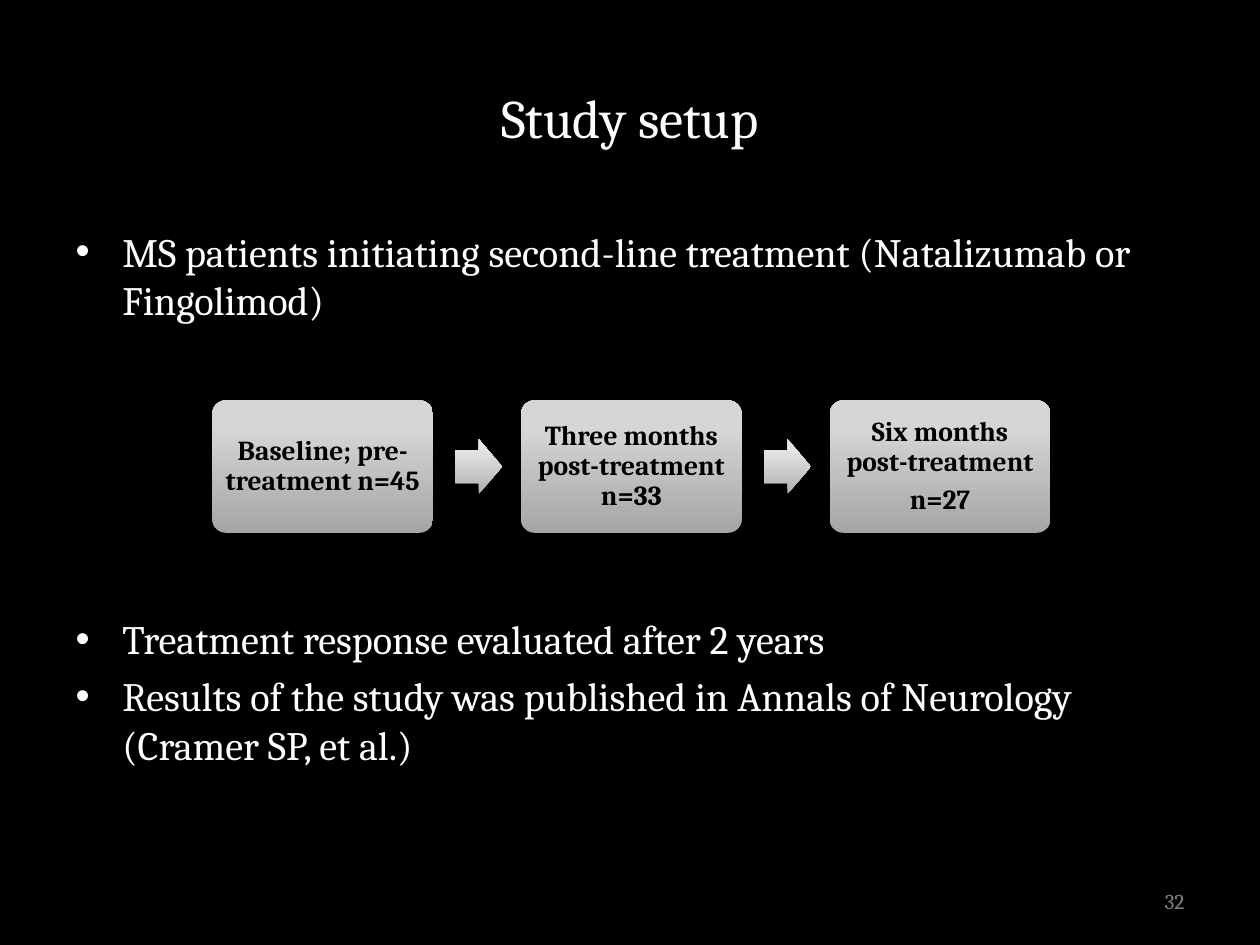
from copy import deepcopy
from dataclasses import dataclass

from lxml import etree
from pptx import Presentation
from pptx.dml.color import RGBColor
from pptx.enum.shapes import MSO_SHAPE
from pptx.enum.text import MSO_ANCHOR, PP_ALIGN
from pptx.oxml.ns import qn
from pptx.util import Inches, Pt

ROUNDED = MSO_SHAPE.ROUNDED_RECTANGLE
RIGHT_ARROW = MSO_SHAPE.RIGHT_ARROW
LEFT, CENTER, RIGHT = PP_ALIGN.LEFT, PP_ALIGN.CENTER, PP_ALIGN.RIGHT
TOP, MIDDLE = MSO_ANCHOR.TOP, MSO_ANCHOR.MIDDLE


@dataclass(frozen=True)
class Theme:
    font: str = "Cambria"
    background: str = "000000"
    text: str = "FFFFFF"
    step_text: str = "000000"
    number: str = "808080"
    step_gradient: tuple = ((0, "A5A5A5"), (0.8, "D6D6D6"), (1, "D7D7D7"))
    arrow_gradient: tuple = ((0, "B0B0B0"), (0.8, "E4E4E4"), (1, "E5E5E5"))
    title_size: float = 43.4
    body_size: float = 32.2
    step_size: float = 22
    number_size: float = 17


def add_bullet(paragraph, indent):
    properties = paragraph._p.get_or_add_pPr()
    properties.set("marL", str(Inches(indent)))
    properties.set("indent", str(-Inches(indent)))
    etree.SubElement(properties, qn("a:buFont"), typeface="Arial")
    etree.SubElement(properties, qn("a:buChar"), char="•")


def write_text(shape, lines, *, font, size, color, bold=False, align=LEFT,
               anchor=TOP, insets=(0.14, 0.07), line_spacing=1.0, gap=7, bullet_indent=None):
    frame = shape.text_frame
    frame.word_wrap = True
    frame.vertical_anchor = anchor
    frame.margin_left = frame.margin_right = Inches(insets[0])
    frame.margin_top = frame.margin_bottom = Inches(insets[1])
    for index, line in enumerate(lines):
        paragraph = frame.add_paragraph() if index else frame.paragraphs[0]
        paragraph.text = line
        if bullet_indent:
            add_bullet(paragraph, bullet_indent)
        paragraph.alignment = align
        paragraph.line_spacing = line_spacing
        if index:
            paragraph.space_before = Pt(gap)
        paragraph.font.name = font
        paragraph.font.size = Pt(size)
        paragraph.font.bold = bold
        paragraph.font.color.rgb = RGBColor.from_string(color)


class SlideBuilder:
    def __init__(self, slide, theme):
        self.slide = slide
        self.theme = theme
        background = slide.background.fill
        background.solid()
        background.fore_color.rgb = RGBColor.from_string(theme.background)

    def text_box(self, lines, left, top, width, height, **text_format):
        box = self.slide.shapes.add_textbox(
            Inches(left), Inches(top), Inches(width), Inches(height))
        write_text(box, lines, font=self.theme.font, **text_format)

    def bullets(self, lines, top, height):
        self.text_box(lines, 0.7, top, 12.6, height, size=self.theme.body_size,
                      color=self.theme.text, bullet_indent=0.52)

    def gradient_shape(self, kind, left, top, width, height, adjustments, gradient):
        shape = self.slide.shapes.add_shape(
            kind, Inches(left), Inches(top), Inches(width), Inches(height))
        for index, value in enumerate(adjustments):
            shape.adjustments[index] = value
        shape.shadow.inherit = False
        shape.line.fill.background()
        shape.fill.gradient()
        shape.fill.gradient_angle = 90
        # The default gradient has two stops; add one for the third colour
        stop_list = shape._element.spPr.find(qn("a:gradFill")).find(qn("a:gsLst"))
        stop_list.append(deepcopy(stop_list[-1]))
        for stop, (position, color) in zip(shape.fill.gradient_stops, gradient):
            stop.position = position
            stop.color.rgb = RGBColor.from_string(color)
        return shape

    def step(self, lines, left, top, width, height):
        shape = self.gradient_shape(ROUNDED, left, top, width, height,
                                    [0.1], self.theme.step_gradient)
        write_text(shape, lines, font=self.theme.font, size=self.theme.step_size,
                   color=self.theme.step_text, bold=True, align=CENTER, anchor=MIDDLE,
                   insets=(0.09, 0.09), line_spacing=0.9)

    def arrow(self, left, top, width, height):
        self.gradient_shape(RIGHT_ARROW, left, top, width, height,
                            [0.6, 0.5], self.theme.arrow_gradient)


def main():
    presentation = Presentation()
    presentation.slide_width = Inches(14)
    presentation.slide_height = Inches(10.5)
    theme = Theme()
    builder = SlideBuilder(
        presentation.slides.add_slide(presentation.slide_layouts[6]), theme)

    # Title
    builder.text_box(["Study setup"], 0.7, 0.42, 12.6, 1.75, size=theme.title_size,
                     color=theme.text, align=CENTER, anchor=MIDDLE)

    # Bullets above and below the timeline
    builder.bullets(
        ["MS patients initiating second-line treatment (Natalizumab or Fingolimod)"], 2.45, 1.3)
    builder.bullets(
        ["Treatment response evaluated after 2 years",
         "Results of the study was published in Annals of Neurology (Cramer SP, et al.)"],
        6.76, 2.62)

    # Timeline: equal steps with an arrow in each gap
    steps = [
        ["Baseline; pre-treatment n=45"],
        ["Three months post-treatment n=33"],
        ["Six months post-treatment", "n=27"],
    ]
    first_left, step_top, step_width, step_height = 2.36, 4.45, 2.45, 1.47
    pitch = 3.43
    arrow_width, arrow_height = 0.52, 0.61
    arrow_top = step_top + (step_height - arrow_height) / 2
    for index, lines in enumerate(steps):
        left = first_left + index * pitch
        if index:
            builder.arrow(left - 0.73, arrow_top, arrow_width, arrow_height)
        builder.step(lines, left, step_top, step_width, step_height)

    # Slide number
    builder.text_box(["32"], 10.03, 9.73, 3.27, 0.56, size=theme.number_size,
                     color=theme.number, align=RIGHT, anchor=MIDDLE)

    presentation.save("out.pptx")


if __name__ == "__main__":
    main()
